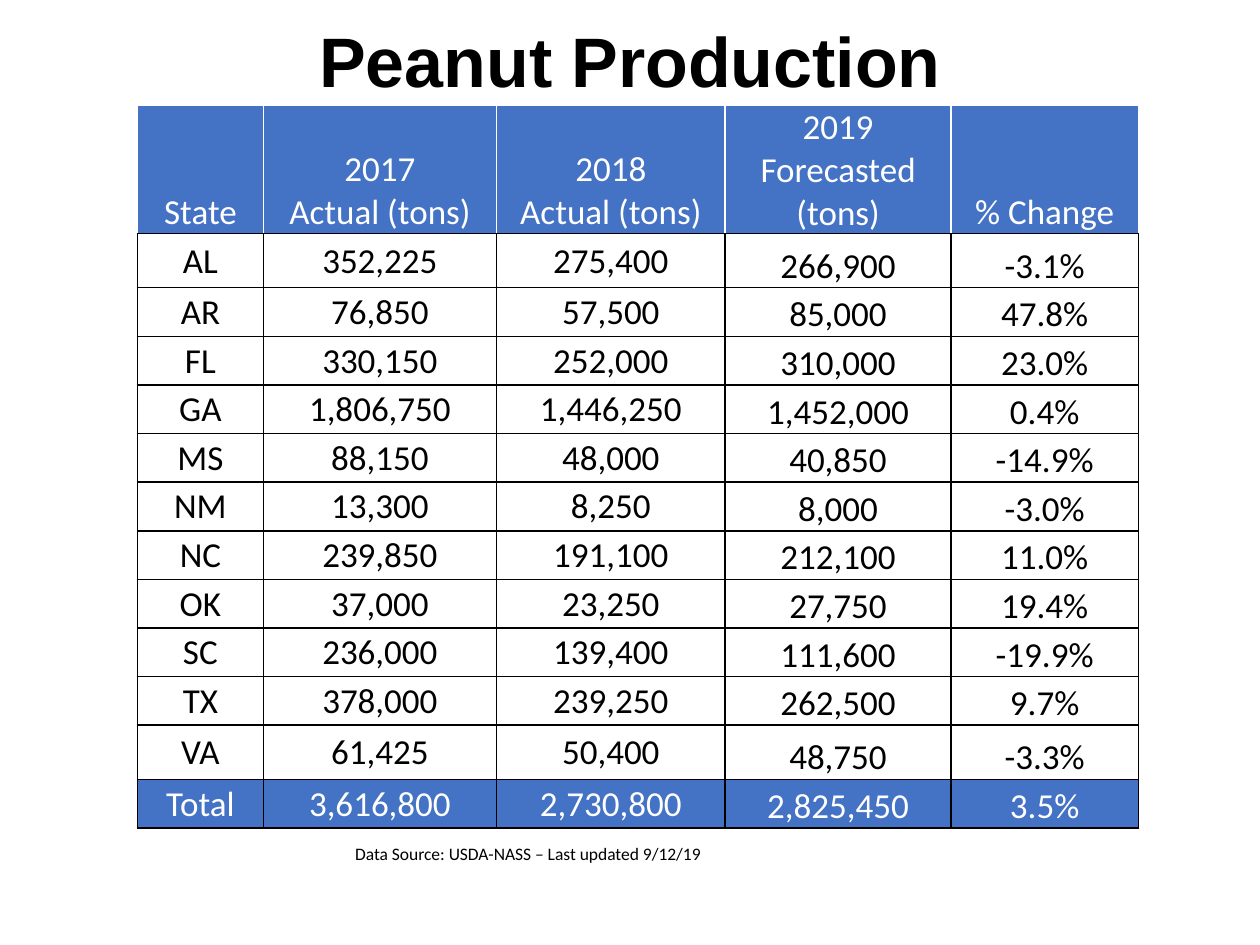
from lxml import etree
from pptx import Presentation
from pptx.dml.color import RGBColor
from pptx.enum.text import MSO_ANCHOR, PP_ALIGN
from pptx.oxml.ns import qn
from pptx.util import Cm, Pt

BLACK = RGBColor(0x00, 0x00, 0x00)
WHITE = RGBColor(0xFF, 0xFF, 0xFF)
BLUE = RGBColor(0x44, 0x72, 0xC4)
LEFT, CENTER = PP_ALIGN.LEFT, PP_ALIGN.CENTER
TOP, MIDDLE, BOTTOM = MSO_ANCHOR.TOP, MSO_ANCHOR.MIDDLE, MSO_ANCHOR.BOTTOM

# Content
TITLE = "Peanut Production"
SOURCE = "Data Source: USDA-NASS – Last updated 9/12/19"
HEADER = ("State", "2017\nActual (tons)", "2018\nActual (tons)",
          "2019\nForecasted (tons)", "% Change")
STATES = [
    ("AL", "352,225", "275,400", "266,900", "-3.1%"),
    ("AR", "76,850", "57,500", "85,000", "47.8%"),
    ("FL", "330,150", "252,000", "310,000", "23.0%"),
    ("GA", "1,806,750", "1,446,250", "1,452,000", "0.4%"),
    ("MS", "88,150", "48,000", "40,850", "-14.9%"),
    ("NM", "13,300", "8,250", "8,000", "-3.0%"),
    ("NC", "239,850", "191,100", "212,100", "11.0%"),
    ("OK", "37,000", "23,250", "27,750", "19.4%"),
    ("SC", "236,000", "139,400", "111,600", "-19.9%"),
    ("TX", "378,000", "239,250", "262,500", "9.7%"),
    ("VA", "61,425", "50,400", "48,750", "-3.3%"),
]
TOTAL = ("Total", "3,616,800", "2,730,800", "2,825,450", "3.5%")
ROWS = [HEADER, *STATES, TOTAL]
LAST = len(ROWS) - 1

# Sizes in cm; the first and last state rows are a little taller
COL_WIDTHS = (2.54, 4.7, 4.61, 4.55, 3.78)
HEADER_H, EDGE_H, ROW_H = 2.59, 1.09, 0.98
ROW_HEIGHTS = [HEADER_H, EDGE_H] + [ROW_H] * (len(STATES) - 2) + [EDGE_H, ROW_H]


def write(tf, text, size=20, font="Calibri", color=BLACK, bold=False,
          align=LEFT, spacing=None):
    tf.word_wrap = True
    p = tf.paragraphs[0]
    p.text = text
    p.alignment = align
    if spacing:
        p.line_spacing = spacing
    for r in p.runs:
        r.font.size = Pt(size)
        r.font.name = font
        r.font.bold = bold
        r.font.color.rgb = color


def add_text(s, left, top, width, height, text, **fmt):
    tf = s.shapes.add_textbox(Cm(left), Cm(top), Cm(width), Cm(height)).text_frame
    tf.vertical_anchor = TOP
    write(tf, text, **fmt)


def set_borders(cell, colors):
    tc_pr = cell._tc.get_or_add_tcPr()
    for side, color in zip("LRTB", colors):
        ln = etree.SubElement(tc_pr, qn(f"a:ln{side}"), w=str(Pt(1)))
        fill = etree.SubElement(ln, qn("a:solidFill"))
        etree.SubElement(fill, qn("a:srgbClr"), val=str(color))


prs = Presentation()
prs.slide_width, prs.slide_height = Cm(25.4), Cm(19.05)
s = prs.slides.add_slide(prs.slide_layouts[6])

# Title
add_text(s, 1.75, 0.43, 21.9, 3.15, TITLE, size=40, font="Arial", bold=True,
         align=CENTER, spacing=0.9)

# Production table
table = s.shapes.add_table(len(ROWS), len(HEADER), Cm(2.77), Cm(2.12),
                           Cm(sum(COL_WIDTHS)), Cm(sum(ROW_HEIGHTS))).table
table.horz_banding = False
for column, width in zip(table.columns, COL_WIDTHS):
    column.width = Cm(width)
for i, (row, height) in enumerate(zip(ROWS, ROW_HEIGHTS)):
    table.rows[i].height = Cm(height)
    is_header = i == 0
    shaded = i in (0, LAST)
    for j, text in enumerate(row):
        cell = table.cell(i, j)
        edge = WHITE if is_header else BLACK
        set_borders(cell, (edge, edge, edge, BLACK))
        cell.fill.solid()
        cell.fill.fore_color.rgb = BLUE if shaded else WHITE
        cell.margin_left = cell.margin_right = cell.margin_top = Cm(0.02)
        cell.margin_bottom = 0
        cell.vertical_anchor = BOTTOM if is_header or j >= 3 else MIDDLE
        write(cell.text_frame, text, color=WHITE if shaded else BLACK, align=CENTER)

# Source line
add_text(s, 6.91, 16.87, 18.03, 0.69, SOURCE, size=10)

prs.save("out.pptx")
